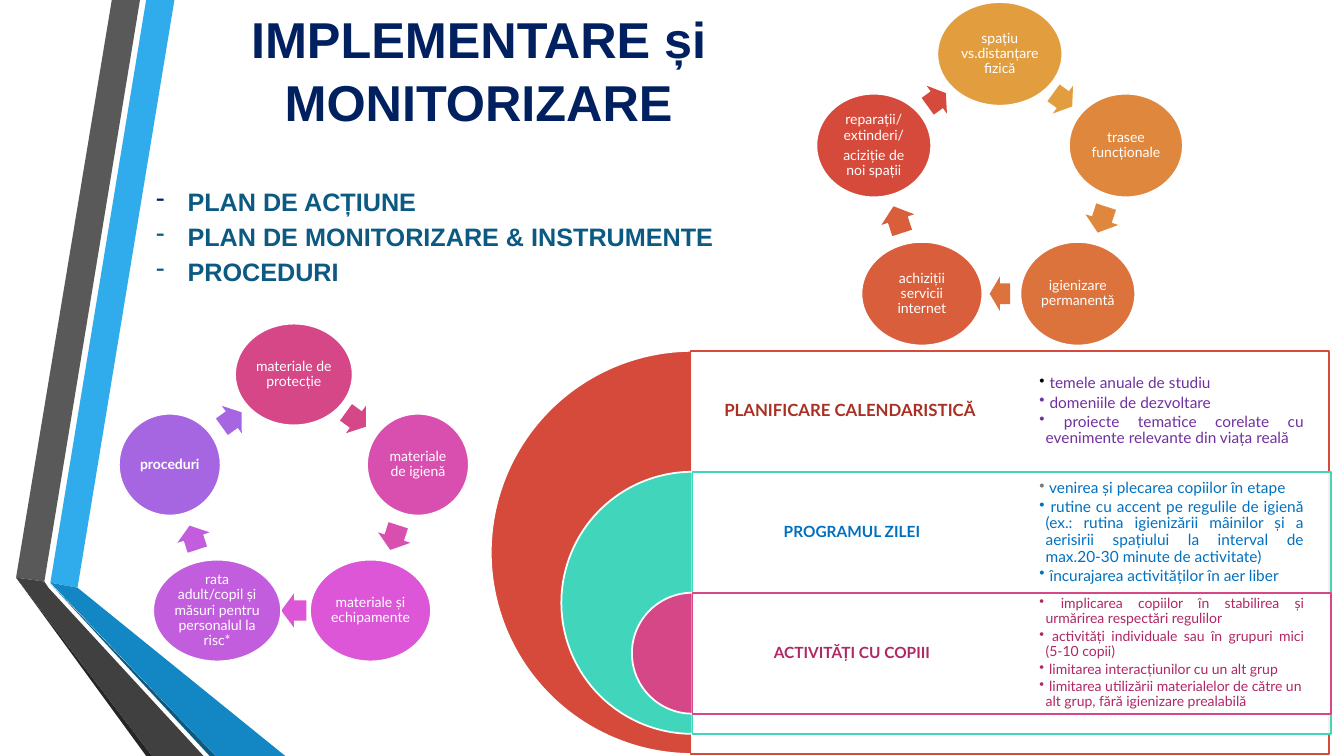
from math import cos, radians, sin

from lxml import etree
from pptx import Presentation
from pptx.dml.color import RGBColor
from pptx.enum.shapes import MSO_SHAPE as Shape
from pptx.enum.text import MSO_ANCHOR as Anchor, PP_ALIGN as Align
from pptx.oxml.ns import qn
from pptx.util import Pt

# Content
TITLE = ["IMPLEMENTARE și MONITORIZARE"]
PLANS = ["PLAN DE ACȚIUNE", "PLAN DE MONITORIZARE & INSTRUMENTE", "PROCEDURI"]

RIBBONS = [  # colour, corners
    ("30ACEC", [(36, 416.2), (55.4, 419.8), (124.6, 0), (104.4, 0)]),
    ("595959", [(100, 0), (79.9, 0), (11.5, 412.6), (31.7, 415.4)]),
    ("262626", [(11.5, 412.6), (104.4, 540), (108.7, 540)]),
    ("0C5A82", [(36, 416.9), (149.8, 540), (154.1, 540)]),
    ("1287C3", [(36, 416.2), (154.1, 540), (203.8, 540), (55.4, 419.8)]),
    ("404040", [(145.4, 540), (34.6, 419.8), (31.7, 415.4), (11.5, 412.6),
                (108.7, 540)]),
]

CYCLES = [  # nodes: lines, width, colour, length of the arrow that follows
    dict(center=(209.9, 360.7), radius=93.2, height=72.7, nodes=[
        (["materiale de protecție"], 84, "D64787", 17.5),
        (["materiale de igienă"], 72.7, "D94FB0", 18.5),
        (["materiale și echipamente"], 86.4, "DC56D7", 18),
        (["rata adult/copil și măsuri pentru personalul la risc*"],
         91.4, "C25EDE", 18),
        (["proceduri"], 72.7, "A666E1", 17.5)]),
    dict(center=(714.2, 133.2), radius=94.7, height=74, nodes=[
        (["spațiu vs.distanțare fizică"], 89.3, "E29D3E", 16.5),
        (["trasee funcționale"], 81.4, "DF873D", 19.5),
        (["igienizare permanentă"], 82, "DC723C", 14.5),
        (["achiziții servicii internet"], 86.4, "D95E3C", 20),
        (["reparații/ extinderi/", "aciziție de noi spații"],
         82, "D64A3B", 16)]),
]
BOLD_NODE = "proceduri"

PANELS = [
    dict(title="PLANIFICARE CALENDARISTICĂ", title_size=12, title_color="A93023",
         fill="D64A3B", left=493.2, diameter=288, size=11, color="7030A0",
         first_bullet="000000", justified=3, items=[
             "temele anuale de studiu",
             "domeniile de dezvoltare",
             "proiecte tematice corelate cu evenimente relevante din viața reală"]),
    dict(title="PROGRAMUL ZILEI", title_size=11, title_color="0070C0",
         fill="41D6BC", left=494.6, diameter=187.2, size=11, color="0070C0",
         first_bullet="7A7A7A", justified=3, items=[
             "venirea și plecarea copiilor în etape",
             "rutine cu accent pe regulile de igienă (ex.: rutina igienizării "
             "mâinilor și a aerisirii spațiului la interval de max.20-30 minute "
             "de activitate)",
             "încurajarea activităților în aer liber"]),
    dict(title="ACTIVITĂȚI CU COPIII", title_size=11, title_color="AF2764",
         fill="D64787", left=494.6, diameter=86.4, size=10, color="AF2764",
         first_bullet="AF2764", justified=2, items=[
             "implicarea copiilor în stabilirea și urmărirea respectări regulilor",
             "activități individuale sau în grupuri mici (5-10 copii)",
             "limitarea interacțiunilor cu un alt grup",
             "limitarea utilizării materialelor de către un alt grup, "
             "fără igienizare prealabilă"]),
]
PANEL_TOP, ROW, PIE_CENTER, PANEL_WIDTH = 250.6, 86.4, 494.6, 456
LIST_LEFT, COLUMN = 722.9, 228

deck = Presentation()
deck.slide_width, deck.slide_height = Pt(960), Pt(540)
page = deck.slides.add_slide(deck.slide_layouts[6])


def rgb(value):
    return RGBColor.from_string(value)


def paint(shape, fill, line=None, opacity=None):
    shape.shadow.inherit = False
    shape.fill.solid()
    shape.fill.fore_color.rgb = rgb(fill)
    if opacity:
        color = shape.fill._xPr.find(".//" + qn("a:srgbClr"))
        etree.SubElement(color, qn("a:alpha")).set("val", str(opacity * 1000))
    if line:
        shape.line.color.rgb = rgb(line)
        shape.line.width = Pt(1.25)
    else:
        shape.line.fill.background()


def add_shape(kind, left, top, width, height, fill, line=None, opacity=None,
              adjust=(), turn=0):
    shape = page.shapes.add_shape(kind, Pt(left), Pt(top), Pt(width), Pt(height))
    for index, value in enumerate(adjust):
        shape.adjustments[index] = value
    shape.rotation = turn
    paint(shape, fill, line, opacity)
    return shape


def add_box(left, top, width, height):
    return page.shapes.add_textbox(Pt(left), Pt(top), Pt(width), Pt(height))


def set_bullet(para, mark, color, indent):
    props = para._p.get_or_add_pPr()
    props.set("marL", str(Pt(indent)))
    props.set("indent", str(-Pt(indent)))
    tint = etree.SubElement(props, qn("a:buClr"))
    etree.SubElement(tint, qn("a:srgbClr")).set("val", color)
    etree.SubElement(props, qn("a:buChar")).set("char", mark)


def write(box, lines, size, color, font="Lato", bold=False, align=Align.CENTER,
          justified=0, anchor=Anchor.MIDDLE, inset=(1, 1), spacing=0.9, after=0,
          bullet=None, first_bullet=None, indent=0):
    frame = box.text_frame
    frame.word_wrap = True
    frame.vertical_anchor = anchor
    frame.margin_left = frame.margin_right = Pt(inset[0])
    frame.margin_top = frame.margin_bottom = Pt(inset[1])
    for index, line in enumerate(lines):
        para = frame.add_paragraph() if index else frame.paragraphs[0]
        para.alignment = Align.JUSTIFY if index < justified else align
        para.line_spacing = spacing
        if index < len(lines) - 1:
            para.space_after = Pt(after)
        if bullet:
            mark_color = color if index else first_bullet
            set_bullet(para, bullet, mark_color, indent)
        span = para.add_run()
        span.text = line
        span.font.name, span.font.size, span.font.bold = font, Pt(size), bold
        span.font.color.rgb = rgb(color)


# Ribbons on the left edge
for color, corners in RIBBONS:
    points = [(Pt(x), Pt(y)) for x, y in corners]
    outline = page.shapes.build_freeform(*points[0], scale=1.0)
    outline.add_line_segments(points[1:], close=True)
    paint(outline.convert_to_shape(), color)

# Title and plans
write(add_box(118.8, 3, 446.4, 92), TITLE, 36, "002060", font="Arial", bold=True,
      inset=(7.2, 3.6), spacing=1.05)
write(add_box(104.4, 126.4, 446.4, 80), PLANS, 18, "0C5A82", font="Arial",
      bold=True, align=Align.LEFT, anchor=Anchor.TOP, inset=(7.2, 3.6),
      spacing=1.15, bullet="-", first_bullet="002060", indent=22.5)

# Cycles: five circles on a ring, an arrow midway to the next one
for cycle in CYCLES:
    (center_x, center_y), radius = cycle["center"], cycle["radius"]
    height, nodes = cycle["height"], cycle["nodes"]
    step = 360 / len(nodes)
    for index, (lines, width, color, length) in enumerate(nodes):
        angle = radians(step * index)
        x, y = center_x + radius * sin(angle), center_y - radius * cos(angle)
        circle = add_shape(Shape.OVAL, x - width / 2, y - height / 2, width, height,
                           color, line="FFFFFF")
        write(circle, lines, 10, "FFFFFF", bold=lines[0] == BOLD_NODE, after=3.5)

        turn = step * (index + 0.5)
        reach = radius * cos(radians(step / 2))
        x = center_x + reach * sin(radians(turn))
        y = center_y - reach * cos(radians(turn))
        thick = height / 3
        add_shape(Shape.RIGHT_ARROW, x - length / 2, y - thick / 2, length, thick,
                  color, adjust=(0.6, 0.5), turn=turn)

# Nested half discs with their panels
for row, panel in enumerate(PANELS):
    top, diameter, left = PANEL_TOP + ROW * row, panel["diameter"], panel["left"]
    add_shape(Shape.PIE, PIE_CENTER - diameter / 2, top, diameter, diameter,
              panel["fill"], line="FFFFFF", adjust=(54, 162))
    add_shape(Shape.RECTANGLE, left, top, PANEL_WIDTH, diameter, "FFFFFF",
              line=panel["fill"], opacity=90)
    write(add_box(left, top, COLUMN, ROW), [panel["title"]], panel["title_size"],
          panel["title_color"], bold=True, inset=(3.6, 3.6))

# Panel lists
for row, panel in enumerate(PANELS):
    write(add_box(LIST_LEFT, PANEL_TOP + ROW * row, COLUMN, ROW),
          [" " + item for item in panel["items"]], panel["size"], panel["color"],
          align=Align.LEFT, justified=panel["justified"], inset=(19.5, 0),
          after=1.7, bullet="•", first_bullet=panel["first_bullet"], indent=4.5)

deck.save("out.pptx")
